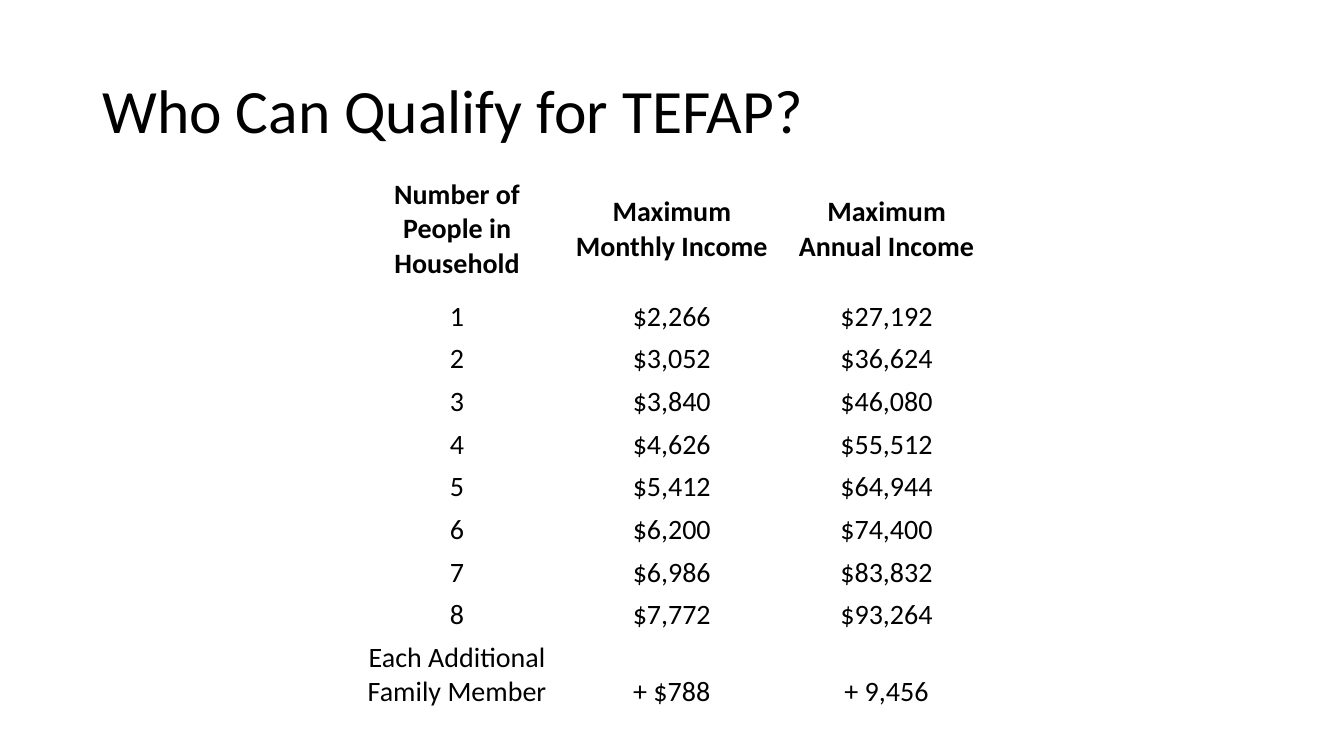
from dataclasses import dataclass

from pptx import Presentation
from pptx.dml.color import RGBColor
from pptx.enum.text import MSO_ANCHOR, PP_ALIGN
from pptx.slide import Slide
from pptx.util import Pt

COLOURS = {"text": "000000"}
FONT = "Calibri"
HEADINGS = ("Number of People in Household", "Maximum Monthly Income", "Maximum Annual Income")
CELL_FORMAT = {
    "margin_left": Pt(6),
    "margin_right": Pt(6),
    "margin_top": Pt(3),
    "margin_bottom": Pt(3),
    "vertical_anchor": MSO_ANCHOR.MIDDLE,
}


@dataclass(frozen=True)
class IncomeLimit:
    household: str
    monthly: str
    annual: str
    anchor: MSO_ANCHOR = MSO_ANCHOR.MIDDLE


LIMITS = [
    IncomeLimit("1", "$2,266", "$27,192"),
    IncomeLimit("2", "$3,052", "$36,624"),
    IncomeLimit("3", "$3,840", "$46,080"),
    IncomeLimit("4", "$4,626", "$55,512"),
    IncomeLimit("5", "$5,412", "$64,944"),
    IncomeLimit("6", "$6,200", "$74,400"),
    IncomeLimit("7", "$6,986", "$83,832"),
    IncomeLimit("8", "$7,772", "$93,264"),
    IncomeLimit("Each Additional\nFamily Member", "+ $788", "+ 9,456", MSO_ANCHOR.BOTTOM),
]


def set_attributes(target: object, values: dict) -> None:
    for name, value in values.items():
        setattr(target, name, value)


def format_text(frame, size: float, align: PP_ALIGN, bold: bool = False) -> None:
    for para in frame.paragraphs:
        para.alignment = align
        for span in para.runs:
            set_attributes(span.font, {"name": FONT, "size": Pt(size), "bold": bold})
            span.font.color.rgb = RGBColor.from_string(COLOURS["text"])


def add_title(page: Slide, text: str) -> None:
    title = page.shapes.title
    set_attributes(title, {"left": Pt(66), "top": Pt(28.75), "width": Pt(828), "height": Pt(104.4)})
    frame = title.text_frame
    set_attributes(frame, {"text": text, "word_wrap": True, "vertical_anchor": MSO_ANCHOR.MIDDLE})
    frame.paragraphs[0].line_spacing = 0.9
    format_text(frame, 44, PP_ALIGN.LEFT)


def fill_cell(cell, text: str, bold: bool, anchor: MSO_ANCHOR) -> None:
    set_attributes(cell, CELL_FORMAT | {"text": text, "vertical_anchor": anchor})
    cell.fill.background()
    format_text(cell.text_frame, 20, PP_ALIGN.CENTER, bold)


def add_income_table(page: Slide) -> None:
    box = page.shapes.add_table(
        len(LIMITS) + 1, len(HEADINGS), Pt(249.8), Pt(116.6), Pt(460.2), Pt(412)
    )
    table = box.table
    set_attributes(table, {"first_row": False, "horz_banding": False})
    for column in table.columns:
        column.width = Pt(153.4)
    for index, row in enumerate(table.rows):
        row.height = Pt(24 if index else 94.4)

    for column, heading in enumerate(HEADINGS):
        fill_cell(table.cell(0, column), heading, True, MSO_ANCHOR.MIDDLE)
    for row, limit in enumerate(LIMITS, start=1):
        for column, text in enumerate((limit.household, limit.monthly, limit.annual)):
            fill_cell(table.cell(row, column), text, False, limit.anchor)
    box.height = Pt(412)


def main() -> None:
    deck = Presentation()
    set_attributes(deck, {"slide_width": Pt(960), "slide_height": Pt(540)})
    page = deck.slides.add_slide(deck.slide_layouts.get_by_name("Title Only"))
    add_title(page, "Who Can Qualify for TEFAP?")
    add_income_table(page)
    deck.save("out.pptx")


if __name__ == "__main__":
    main()
